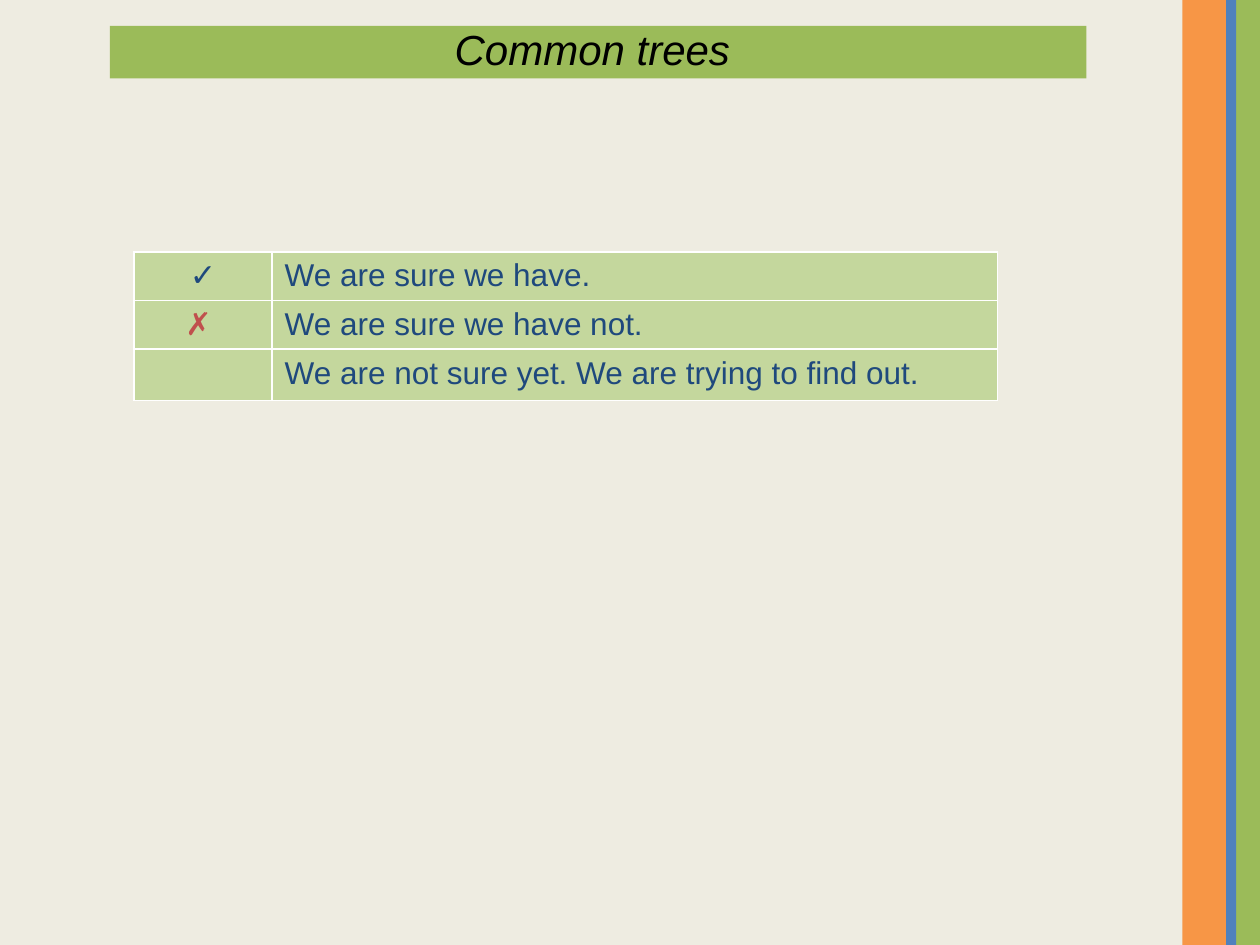
from lxml import etree
from pptx import Presentation
from pptx.dml.color import RGBColor
from pptx.enum import shapes, text
from pptx.oxml import ns
from pptx.util import Pt

COLORS = {
    "background": "EEECE1", "orange": "F79646", "blue": "4F81BD",
    "green": "9BBB59", "cell": "C4D79D", "border": "FFFFFF",
    "title": "000000", "body": "1F497D", "cross": "C0504D",
}


def paint(fill, color):
    fill.solid()
    fill.fore_color.rgb = RGBColor.from_string(COLORS[color])


def add_run(paragraph, words, size, color):
    run = paragraph.add_run()
    run.text = words
    run.font.name = "Arial"
    run.font.size = Pt(size)
    run.font.color.rgb = RGBColor.from_string(COLORS[color])
    return run


deck = Presentation()
deck.slide_width, deck.slide_height = Pt(720), Pt(540)
slide = deck.slides.add_slide(deck.slide_layouts[5])
paint(slide.background.fill, "background")

# Stripes down the right edge
for left, width, color in [(675.7, 25.2, "orange"), (706.4, 13.6, "green"), (700.6, 5.8, "blue")]:
    stripe = slide.shapes.add_shape(
        shapes.MSO_SHAPE.RECTANGLE, Pt(left), Pt(0), Pt(width), Pt(540))
    stripe.shadow.inherit = False
    paint(stripe.fill, color)
    stripe.line.fill.background()

# Title band
title = slide.shapes.title
title.left, title.top, title.width, title.height = Pt(62.8), Pt(14.8), Pt(558), Pt(30)
paint(title.fill, "green")
title.text_frame.vertical_anchor = text.MSO_ANCHOR.MIDDLE
title.text_frame.auto_size = text.MSO_AUTO_SIZE.NONE
heading = title.text_frame.paragraphs[0]
heading.alignment = text.PP_ALIGN.CENTER
heading.line_spacing = 0.9
add_run(heading, "Common trees ", 24, "title").font.italic = True

# Key to the marks
KEY = [
    ("✓", "body", "We are sure we have."),
    ("✗ ", "cross", "We are sure we have not."),
    ("", "body", "We are not sure yet. We are trying to find out."),
]
key = slide.shapes.add_table(len(KEY), 2, Pt(76.5), Pt(144), Pt(493.5), Pt(83.4)).table
key.first_row = key.horz_banding = False
for column, width in zip(key.columns, (79, 414.5)):
    column.width = Pt(width)

for row, (mark, mark_color, meaning) in enumerate(KEY):
    key.rows[row].height = Pt(27.8)
    entries = [(mark, mark_color, text.PP_ALIGN.CENTER), (meaning, "body", text.PP_ALIGN.LEFT)]
    for col, (words, color, alignment) in enumerate(entries):
        cell = key.cell(row, col)
        paint(cell.fill, "cell")
        paragraph = cell.text_frame.paragraphs[0]
        paragraph.alignment = alignment
        if words:
            add_run(paragraph, words, 18, color)
        else:
            paragraph.font.size = Pt(18)
        properties = cell._tc.get_or_add_tcPr()
        for position, side in enumerate(("lnL", "lnR", "lnT", "lnB")):
            border = etree.Element(ns.qn(f"a:{side}"), w=str(Pt(1)))
            border_fill = etree.SubElement(border, ns.qn("a:solidFill"))
            etree.SubElement(border_fill, ns.qn("a:srgbClr"), val=COLORS["border"])
            properties.insert(position, border)

deck.save("out.pptx")
